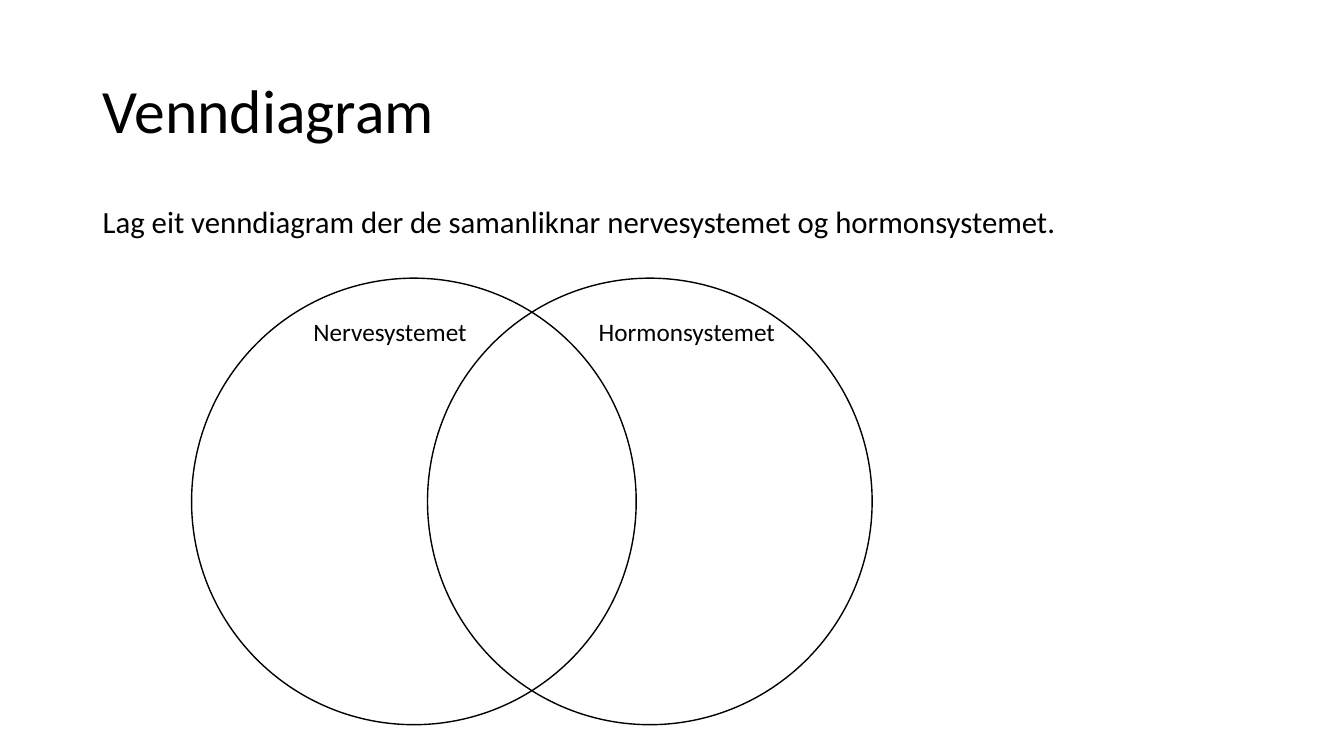
from pptx import Presentation
from pptx.dml.color import RGBColor
from pptx.enum.shapes import MSO_SHAPE
from pptx.enum.text import MSO_ANCHOR
from pptx.util import Inches, Pt

FONT = "Calibri"
BLACK = "000000"

TITLE = "Venndiagram"
TASK = "Lag eit venndiagram der de samanliknar nervesystemet og hormonsystemet."

# Label, label left, label width
SYSTEMS = [
    ("Nervesystemet", 3.01, 1.89),
    ("Hormonsystemet", 5.84, 2.06),
]
CIRCLE_LEFT, CIRCLE_TOP, CIRCLE_STEP = 1.9, 2.76, 2.34
CIRCLE_W, CIRCLE_H = 4.41, 4.43
LABEL_TOP, LABEL_H = 3.09, 0.4


def color(hex_text):
    return RGBColor.from_string(hex_text)


def add_text(slide, text, box, size, anchor=MSO_ANCHOR.TOP, line_spacing=None, before=0):
    tf = slide.shapes.add_textbox(*map(Inches, box)).text_frame
    tf.word_wrap = True
    tf.vertical_anchor = anchor
    p = tf.paragraphs[0]
    p.text = text
    p.line_spacing = line_spacing
    p.space_before = Pt(before)
    font = p.runs[0].font
    font.name = FONT
    font.size = Pt(size)
    font.color.rgb = color(BLACK)


def add_circle(slide, left):
    box = (left, CIRCLE_TOP, CIRCLE_W, CIRCLE_H)
    sp = slide.shapes.add_shape(MSO_SHAPE.OVAL, *map(Inches, box))
    sp.shadow.inherit = False
    sp.fill.background()
    sp.line.color.rgb = color(BLACK)
    sp.line.width = Pt(1)


def main():
    prs = Presentation()
    prs.slide_width, prs.slide_height = Inches(13.33), Inches(7.5)
    slide = prs.slides.add_slide(prs.slide_layouts[6])

    add_text(slide, TITLE, (0.92, 0.4, 11.5, 1.45), 44, MSO_ANCHOR.MIDDLE, 0.9)
    add_text(slide, TASK, (0.92, 2, 11.5, 4.76), 22, line_spacing=0.9, before=10)

    for i in range(len(SYSTEMS)):
        add_circle(slide, CIRCLE_LEFT + i * CIRCLE_STEP)
    for label, left, width in SYSTEMS:
        add_text(slide, label, (left, LABEL_TOP, width, LABEL_H), 18)

    prs.save("out.pptx")


if __name__ == "__main__":
    main()
